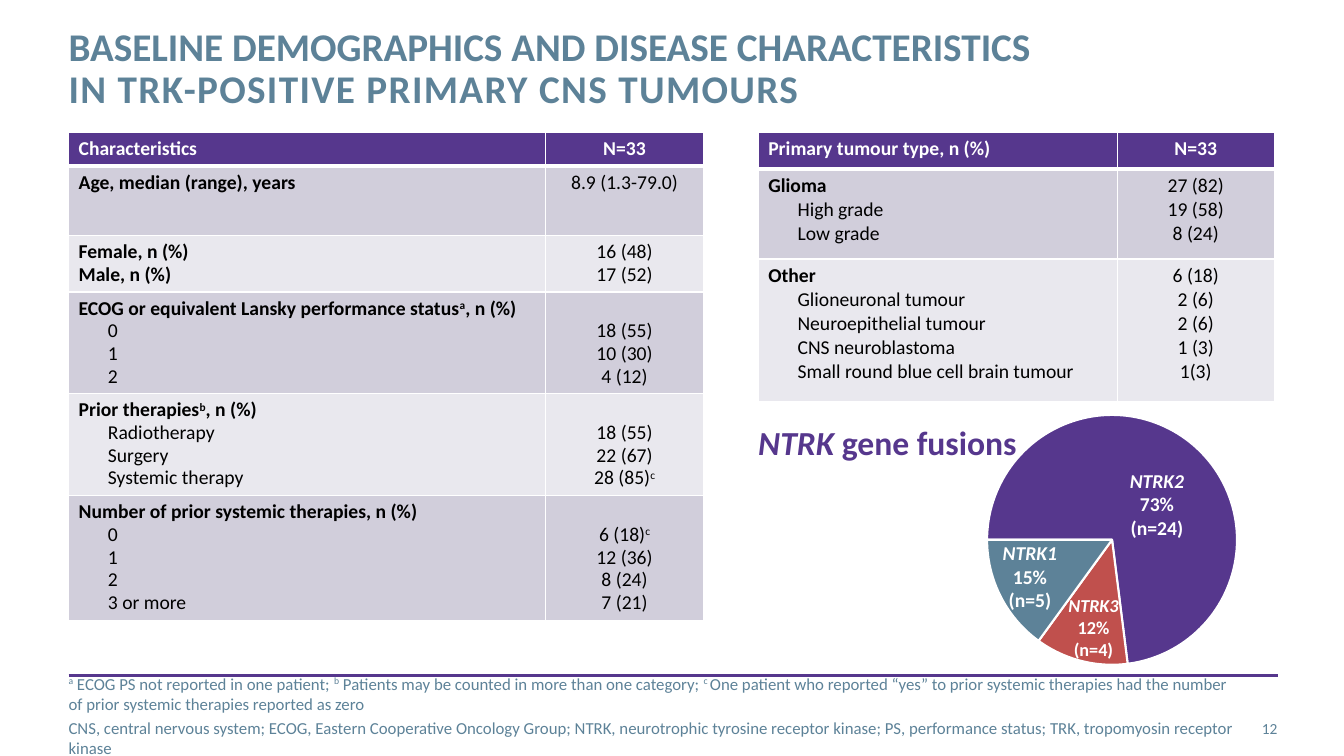
from lxml import etree
from pptx import Presentation
from pptx.chart.data import CategoryChartData
from pptx.dml.color import RGBColor
from pptx.enum.chart import XL_CHART_TYPE
from pptx.enum.text import MSO_ANCHOR, PP_ALIGN
from pptx.oxml import parse_xml
from pptx.oxml.ns import nsdecls, qn
from pptx.util import Inches, Pt

PIE = XL_CHART_TYPE.PIE
LEFT, CENTER, RIGHT = PP_ALIGN.LEFT, PP_ALIGN.CENTER, PP_ALIGN.RIGHT
TOP, MIDDLE = MSO_ANCHOR.TOP, MSO_ANCHOR.MIDDLE

PURPLE = RGBColor(0x56, 0x37, 0x8D)
TEAL = RGBColor(0x5D, 0x82, 0x98)
RED = RGBColor(0xC0, 0x50, 0x4D)
WHITE = RGBColor(0xFF, 0xFF, 0xFF)
BLACK = RGBColor(0, 0, 0)
BANDS = RGBColor(0xD1, 0xCE, 0xDB), RGBColor(0xE9, 0xE8, 0xEE)
FONT = "Calibri"

# Content: ^x^ is superscript, *x* is italic
TITLE = ("BASELINE DEMOGRAPHICS AND DISEASE CHARACTERISTICS",
         "IN TRK-POSITIVE PRIMARY CNS TUMOURS")
FUSIONS = "*NTRK* gene fusions"
FOOTNOTES = [
    "^a^ ECOG PS not reported in one patient; ^b^ Patients may be counted in more than one "
    "category; ^c ^One patient who reported “yes” to prior systemic therapies had the number "
    "of prior systemic therapies reported as zero",
    "CNS, central nervous system; ECOG, Eastern Cooperative Oncology Group; NTRK, neurotrophic "
    "tyrosine receptor kinase; PS, performance status; TRK, tropomyosin receptor kinase",
]
PAGE = "12"

# Table rows: bold lines, indented lines, values, row height
CHARACTERISTICS = [
    (["Characteristics"], [], ["N=33"], 0.33),
    (["Age, median (range), years"], [], ["8.9 (1.3-79.0)"], 0.69),
    (["Female, n (%)", "Male, n (%)"], [], ["16 (48)", "17 (52)"], 0.56),
    (["ECOG or equivalent Lansky performance status^a^, n (%)"], ["0", "1", "2"],
     ["18 (55)", "10 (30)", "4 (12)"], 1.01),
    (["Prior therapies^b^, n (%)"], ["Radiotherapy", "Surgery", "Systemic therapy"],
     ["18 (55)", "22 (67)", "28 (85)^c^"], 1.01),
    (["Number of prior systemic therapies, n (%)"], ["0", "1", "2", "3 or more"],
     ["6 (18)^c^", "12 (36)", "8 (24)", "7 (21)"], 1.24),
]
TUMOUR_TYPES = [
    (["Primary tumour type, n (%)"], [], ["N=33"], 0.37),
    (["Glioma"], ["High grade", "Low grade"], ["27 (82)", "19 (58)", "8 (24)"], 0.89),
    (["Other"], ["Glioneuronal tumour", "Neuroepithelial tumour", "CNS neuroblastoma",
                 "Small round blue cell brain tumour"],
     ["6 (18)", "2 (6)", "2 (6)", "1 (3)", "1(3)"], 1.41),
]
# Gene, percent, patients, colour, label size, label box
GENES = [
    ("NTRK2", 73, 24, PURPLE, 14, (11.1, 4.6, 0.75, 0.81)),
    ("NTRK3", 12, 4, RED, 13, (10.49, 5.85, 0.71, 0.76)),
    ("NTRK1", 15, 5, TEAL, 14, (9.84, 5.32, 0.75, 0.81)),
]

# Columns of the page
MARGIN, RIGHT_COLUMN, TABLE_TOP = 0.68, 7.52, 1.31
INDENT, CELL_PAD = 0.29, 0.05


def inches(*lengths):
    return [Inches(v) for v in lengths]


def add_runs(p, text, size, color, bold=False):
    for i, part in enumerate(text.split("^")):
        for j, piece in enumerate(part.split("*")):
            if not piece:
                continue
            r = p.add_run()
            r.text = piece
            f = r.font
            f.name, f.size, f.bold, f.italic = FONT, Pt(size), bold, j % 2 == 1
            f.color.rgb = color
            if i % 2:
                r._r.get_or_add_rPr().set("baseline", "30000")


def fill_text(tf, lines, size, color, bold=False, align=LEFT, spacing=None, before=0):
    """Write lines into a frame, one paragraph each."""
    for i, line in enumerate(lines):
        p = tf.add_paragraph() if i else tf.paragraphs[0]
        p.alignment, p.line_spacing = align, spacing
        if i and before:
            p.space_before = Pt(before)
        add_runs(p, line, size, color, bold)


def add_text(s, box, lines, size, color, margins=(0, 0, 0, 0), wrap=True, anchor=TOP, **kw):
    tf = s.shapes.add_textbox(*inches(*box)).text_frame
    tf.word_wrap, tf.vertical_anchor = wrap, anchor
    tf.margin_left, tf.margin_top, tf.margin_right, tf.margin_bottom = inches(*margins)
    fill_text(tf, lines, size, color, **kw)


def add_borders(cell, header):
    tcPr = cell._tc.get_or_add_tcPr()
    edges = {"lnL": 1, "lnR": 1, "lnT": 1, "lnB": 3} if header else {"lnL": 1, "lnR": 1, "lnB": 1}
    for tag, width in edges.items():
        tcPr.append(parse_xml(
            f'<a:{tag} {nsdecls("a")} w="{Pt(width)}"><a:solidFill>'
            f'<a:srgbClr val="{WHITE}"/></a:solidFill></a:{tag}>'))


def add_data_table(s, left, widths, rows, spacing):
    height = sum(row[3] for row in rows)
    table = s.shapes.add_table(len(rows), 2, *inches(left, TABLE_TOP, sum(widths), height)).table
    for column, width in zip(table.columns, widths):
        column.width = Inches(width)
    for r, (heads, subs, values, row_height) in enumerate(rows):
        table.rows[r].height = Inches(row_height)
        label, value = table.cell(r, 0), table.cell(r, 1)
        for cell in (label, value):
            add_borders(cell, r == 0)
            cell.fill.solid()
            cell.fill.fore_color.rgb = BANDS[(r - 1) % 2] if r else PURPLE
        color, leading = (BLACK, spacing) if r else (WHITE, 1.0)
        fill_text(label.text_frame, heads, 14, color, bold=True, spacing=leading)
        for sub in subs:
            p = label.text_frame.add_paragraph()
            p._p.get_or_add_pPr().set("marL", str(Inches(INDENT)))
            p.line_spacing = leading
            add_runs(p, sub, 14, color)
        # Values line up with the last label lines
        skipped = len(heads) + len(subs) - len(values)
        value.margin_top = Inches(CELL_PAD) + skipped * Pt(14 * 1.22 * leading)
        fill_text(value.text_frame, values, 14, color, bold=r == 0, align=CENTER, spacing=leading)


def add_gene_pie(s):
    data = CategoryChartData()
    data.categories = ["1", "2", "3"]
    data.add_series("Series 1", [gene[1] for gene in GENES])
    chart = s.shapes.add_chart(PIE, *inches(9.42, 3.97, 3.22, 2.77), data).chart
    chart.has_legend = chart.has_title = False
    chart.font.name, chart.font.size = FONT, Pt(10)
    chart.font.color.rgb = BLACK
    plot = chart.plots[0]
    plot.vary_by_categories = True
    for i, gene in enumerate(GENES):
        fmt = plot.series[0].points[i].format
        fmt.fill.solid()
        fmt.fill.fore_color.rgb = gene[3]
        fmt.line.color.rgb, fmt.line.width = WHITE, Pt(1.5)
    # Start angle and plot area
    area = chart._chartSpace.chart.plotArea
    pie = area.find(qn("c:pieChart"))
    for parent, tag in ((pie, "c:firstSliceAng"), (area, "c:layout")):
        for old in parent.findall(qn(tag)):
            parent.remove(old)
    etree.SubElement(pie, qn("c:firstSliceAng")).set("val", "270")
    places = dict(layoutTarget="inner", xMode="edge", yMode="edge", x=0.115, y=0.053, w=0.77, h=0.895)
    settings = "".join(f'<c:{k} val="{v}"/>' for k, v in places.items())
    area.insert(0, parse_xml(
        f'<c:layout {nsdecls("c")}><c:manualLayout>{settings}</c:manualLayout></c:layout>'))


def main():
    prs = Presentation()
    prs.slide_width, prs.slide_height = inches(13.33, 7.5)
    s = prs.slides.add_slide(prs.slide_layouts[5])

    # Title
    title = s.shapes.title
    title.left, title.top, title.width, title.height = inches(MARGIN, 0.27, 10.32, 0.88)
    tf = title.text_frame
    tf.text = "\v".join(TITLE)
    tf.word_wrap, tf.vertical_anchor = True, TOP
    tf.margin_left = tf.margin_top = tf.margin_right = tf.margin_bottom = 0
    p = tf.paragraphs[0]
    p.alignment, p.line_spacing = LEFT, Pt(30)
    for r in p.runs:
        r.font.name, r.font.size, r.font.bold = FONT, Pt(28), True
        r.font.color.rgb = TEAL
    p.runs[1]._r.get_or_add_rPr().set("spc", "100")

    # Footer rule
    rule = s.shapes.add_connector(1, *inches(MARGIN, 6.7, 12.68, 6.7))
    rule.line.color.rgb, rule.line.width = PURPLE, Pt(2)
    etree.SubElement(rule._element.spPr, qn("a:effectLst"))

    # Tables
    add_data_table(s, MARGIN, (4.73, 1.57), CHARACTERISTICS, 0.95)
    add_data_table(s, RIGHT_COLUMN, (3.56, 1.56), TUMOUR_TYPES, 1.0)

    # Gene fusions
    add_text(s, (RIGHT_COLUMN, 4.14, 2.79, 0.5), [FUSIONS], 24, PURPLE,
             margins=(0, 0.05, 0.1, 0.05), wrap=False, bold=True)
    add_gene_pie(s)
    for gene, percent, patients, _, size, box in GENES:
        add_text(s, box, [f"*{gene}*", f"{percent}%", f"(n={patients})"], size, WHITE,
                 margins=(0.1, 0.05, 0.1, 0.05), wrap=False, bold=True, align=CENTER)

    # Footnotes and page number
    add_text(s, (MARGIN, 6.9, 11.58, 0.4), FOOTNOTES, 12, TEAL, anchor=MIDDLE, before=3)
    add_text(s, (11.81, 7.03, 0.86, 0.4), [PAGE], 11, TEAL, anchor=MIDDLE, align=RIGHT)

    prs.save("out.pptx")


if __name__ == "__main__":
    main()
